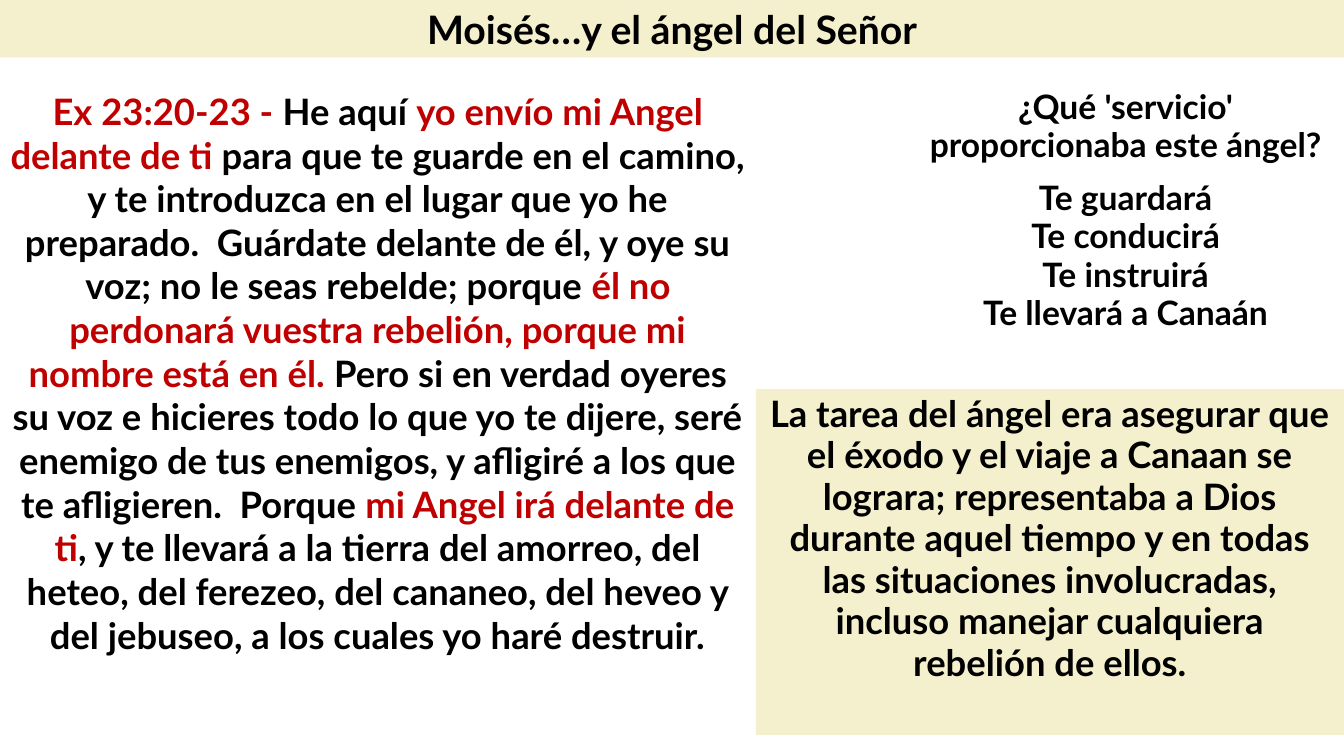
"""Builds a slide on Moses and the angel of the Lord."""
from lxml.etree import SubElement
from pptx import Presentation
from pptx.dml.color import RGBColor
from pptx.enum.shapes import MSO_SHAPE
from pptx.enum.text import MSO_ANCHOR, MSO_AUTO_SIZE, PP_ALIGN
from pptx.oxml.ns import qn
from pptx.util import Pt

CREAM = RGBColor(0xF4, 0xEF, 0xCC)
BLACK = RGBColor(0, 0, 0)
RED = RGBColor(0xC0, 0, 0)
FONT = "Lato"
WIDTH, HEIGHT = 960, 540
SPLIT = 540
CONTENT_TOP = 60

VERSE = [
    ("Ex 23:20-23 - ", RED),
    ("He aquí ", BLACK),
    ("yo envío mi Angel delante de ti ", RED),
    ("para que te guarde en el camino, y te introduzca en el lugar que yo he "
     "preparado.  Guárdate delante de él, y oye su voz; no le seas rebelde; porque ", BLACK),
    ("él no perdonará vuestra rebelión, porque mi nombre está en él. ", RED),
    ("Pero si en verdad oyeres su voz e hicieres todo lo que yo te dijere, seré enemigo "
     "de tus enemigos, y afligiré a los que te afligieren.  Porque ", BLACK),
    ("mi Angel irá delante de ti", RED),
    (", y te llevará a la tierra del amorreo, del heteo, del ferezeo, del cananeo, "
     "del heveo y del jebuseo, a los cuales yo haré destruir.", BLACK),
]
SERVICES = [
    "¿Qué 'servicio' proporcionaba este ángel?",
    "Te guardará",
    "Te conducirá",
    "Te instruirá",
    "Te llevará a Canaán",
]
TASK = ("La tarea del ángel era asegurar que el éxodo y el viaje a Canaan se lograra; "
        "representaba a Dios durante aquel tiempo y en todas las situaciones involucradas, "
        "incluso manejar cualquiera rebelión de ellos.")


def place(box, left, top, width, height):
    """Move and size a box, given in points."""
    box.left, box.top, box.width, box.height = map(Pt, (left, top, width, height))


def fill_cream(box):
    """Give a box the cream background."""
    box.fill.solid()
    box.fill.fore_color.rgb = CREAM


def write(box, paragraphs, size, line_spacing=1.0):
    """Fill a box with centred bold paragraphs, each a list of (text, colour) spans."""
    frame = box.text_frame
    frame.word_wrap = True
    frame.auto_size = MSO_AUTO_SIZE.NONE
    frame.vertical_anchor = MSO_ANCHOR.TOP
    for index, spans in enumerate(paragraphs):
        para = frame.add_paragraph() if index else frame.paragraphs[0]
        para.alignment = PP_ALIGN.CENTER
        para.line_spacing = line_spacing
        para.space_before = para.space_after = Pt(0)
        para.font.name, para.font.size, para.font.bold = FONT, Pt(size), True
        for text, colour in spans:
            span = para.add_run()
            span.text = text
            span.font.color.rgb = colour


def remove_bullets(box):
    """Drop bullets and indents from every paragraph of a box."""
    for para in box.text_frame.paragraphs:
        properties = para._p.get_or_add_pPr()
        properties.set("marL", "0")
        properties.set("indent", "0")
        SubElement(properties, qn("a:buNone"))


def add_title(page, text):
    """Turn the title placeholder into the cream band at the top."""
    box = page.shapes.title
    place(box, 0, 0, WIDTH, 41)
    fill_cream(box)
    write(box, [[(text, BLACK)]], 28)


def add_services(page):
    """Put the question and its answers in the body placeholder."""
    box = page.placeholders[1]
    place(box, 648, CONTENT_TOP, 312, 211)
    write(box, [[(text, BLACK)] for text in SERVICES], 24, 0.95)
    box.text_frame.paragraphs[1].space_before = Pt(10.3)
    remove_bullets(box)


def add_verse(page):
    """Add the Bible passage on the left."""
    box = page.shapes.add_textbox(Pt(0), Pt(CONTENT_TOP), Pt(SPLIT), Pt(HEIGHT - CONTENT_TOP))
    write(box, [VERSE], 26)


def add_task(page):
    """Add the cream panel that sums up the angel's task."""
    box = page.shapes.add_shape(MSO_SHAPE.RECTANGLE, Pt(SPLIT), Pt(278),
                                Pt(WIDTH - SPLIT), Pt(247))
    box.shadow.inherit = False
    box.line.fill.background()
    fill_cream(box)
    write(box, [[(TASK, BLACK)]], 26, 0.95)


def main():
    """Build and save the deck."""
    deck = Presentation()
    deck.slide_width, deck.slide_height = Pt(WIDTH), Pt(HEIGHT)
    page = deck.slides.add_slide(deck.slide_layouts[1])
    add_services(page)
    add_task(page)
    add_verse(page)
    add_title(page, "Moisés…y el ángel del Señor")
    deck.save("out.pptx")


if __name__ == "__main__":
    main()
